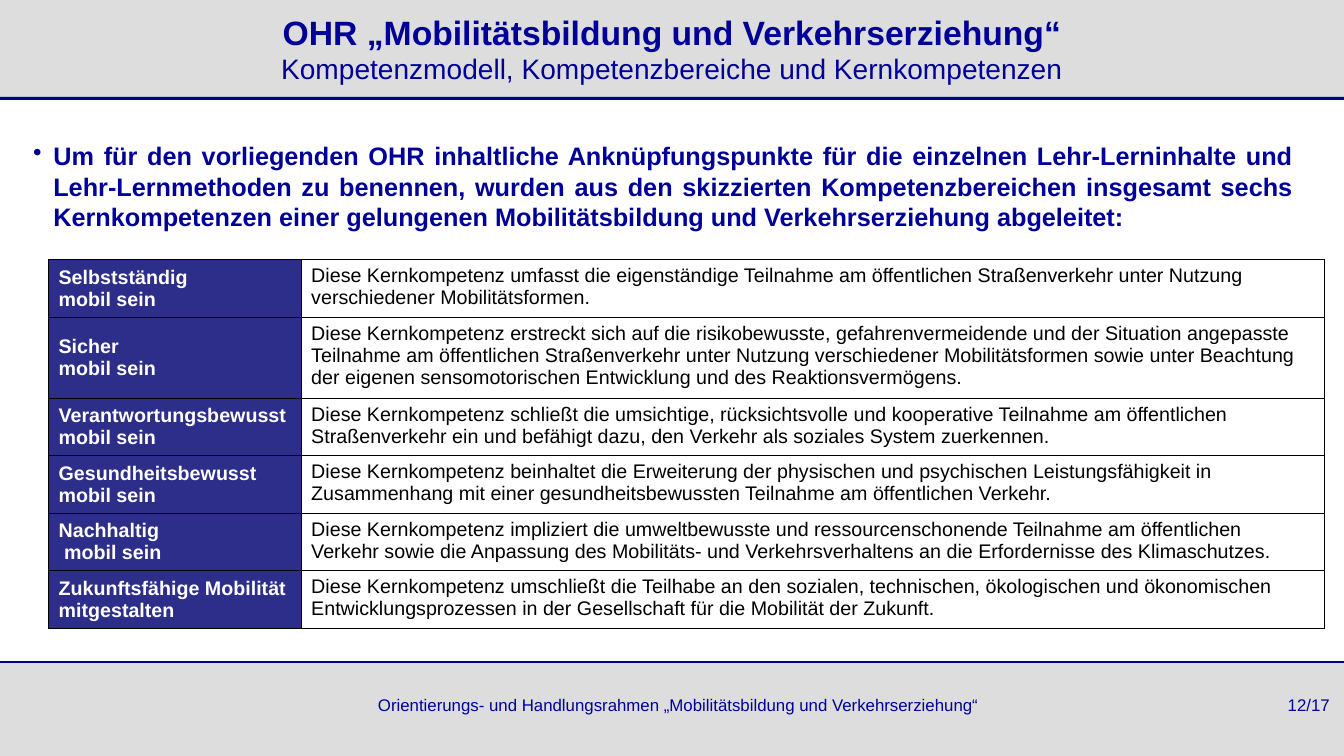
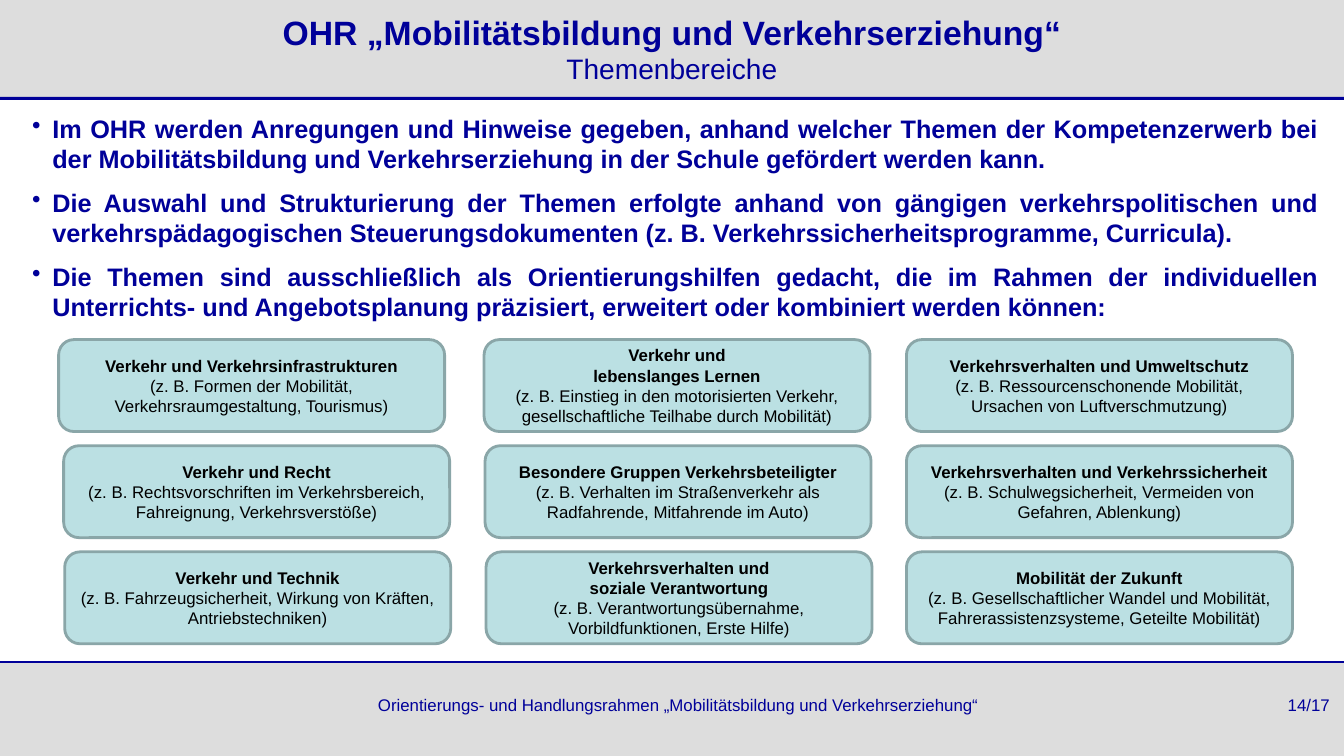
from lxml import etree
from pptx import Presentation
from pptx import util as u
from pptx.dml.color import RGBColor
from pptx.enum import shapes, text
from pptx.oxml.ns import qn

PX = 9144
WIDTH, HEIGHT = 1330, 748
FONT = "Arial"
BLUE = RGBColor(0x00, 0x00, 0x99)
GREY = RGBColor(0xDD, 0xDD, 0xDD)
WHITE = RGBColor(0xFF, 0xFF, 0xFF)
BLACK = RGBColor(0x00, 0x00, 0x00)
INDIGO = RGBColor(0x2D, 0x2D, 0x8A)
AQUA = RGBColor(0xBB, 0xE0, 0xE3)
TEAL = RGBColor(0x8A, 0xA6, 0xA8)
LEFT, CENTER, JUSTIFY = text.PP_ALIGN.LEFT, text.PP_ALIGN.CENTER, text.PP_ALIGN.JUSTIFY

HEADING = "OHR „Mobilitätsbildung und Verkehrserziehung“"
FOOTER = "Orientierungs- und Handlungsrahmen „Mobilitätsbildung und Verkehrserziehung“"
PAGE_COUNT = 17

COMPETENCE_INTRO = [
    "Um für den vorliegenden OHR inhaltliche Anknüpfungspunkte für die einzelnen Lehr-Lerninhalte "
    "und Lehr-Lernmethoden zu benennen, wurden aus den skizzierten Kompetenzbereichen insgesamt "
    "sechs Kernkompetenzen einer gelungenen Mobilitätsbildung und Verkehrserziehung abgeleitet:",
]
COMPETENCES = [
    (57, "Selbstständig\nmobil sein",
     "Diese Kernkompetenz umfasst die eigenständige Teilnahme am öffentlichen Straßenverkehr unter "
     "Nutzung verschiedener Mobilitätsformen."),
    (80, "Sicher\nmobil sein",
     "Diese Kernkompetenz erstreckt sich auf die risikobewusste, gefahrenvermeidende und der "
     "Situation angepasste Teilnahme am öffentlichen Straßenverkehr unter Nutzung verschiedener "
     "Mobilitätsformen sowie unter Beachtung der eigenen sensomotorischen Entwicklung und des "
     "Reaktionsvermögens."),
    (56, "Verantwortungsbewusst mobil sein",
     "Diese Kernkompetenz schließt die umsichtige, rücksichtsvolle und kooperative Teilnahme am "
     "öffentlichen Straßenverkehr ein und befähigt dazu, den Verkehr als soziales System zuerkennen."),
    (57, "Gesundheitsbewusst mobil sein",
     "Diese Kernkompetenz beinhaltet die Erweiterung der physischen und psychischen "
     "Leistungsfähigkeit in Zusammenhang mit einer gesundheitsbewussten Teilnahme am öffentlichen "
     "Verkehr."),
    (57, "Nachhaltig\n mobil sein",
     "Diese Kernkompetenz impliziert die umweltbewusste und ressourcenschonende Teilnahme am "
     "öffentlichen Verkehr sowie die Anpassung des Mobilitäts- und Verkehrsverhaltens an die "
     "Erfordernisse des Klimaschutzes."),
    (56, "Zukunftsfähige Mobilität mitgestalten",
     "Diese Kernkompetenz umschließt die Teilhabe an den sozialen, technischen, ökologischen und "
     "ökonomischen Entwicklungsprozessen in der Gesellschaft für die Mobilität der Zukunft."),
]
TOPIC_INTRO = [
    "Im OHR werden Anregungen und Hinweise gegeben, anhand welcher Themen der Kompetenzerwerb bei "
    "der Mobilitätsbildung und Verkehrserziehung in der Schule gefördert werden kann.",
    "Die Auswahl und Strukturierung der Themen erfolgte anhand von gängigen verkehrspolitischen und "
    "verkehrspädagogischen Steuerungsdokumenten (z. B. Verkehrssicherheitsprogramme, Curricula).",
    "Die Themen sind ausschließlich als Orientierungshilfen gedacht, die im Rahmen der individuellen "
    "Unterrichts- und Angebotsplanung präzisiert, erweitert oder kombiniert werden können:",
]
TOPIC_LEFTS = [(58, 479, 897), (63, 480, 897), (64, 481, 897)]
TOPICS = [
    [("Verkehr und Verkehrsinfrastrukturen",
      "(z. B. Formen der Mobilität, Verkehrsraumgestaltung, Tourismus)"),
     ("Verkehr und\nlebenslanges Lernen",
      "(z. B. Einstieg in den motorisierten Verkehr, gesellschaftliche Teilhabe durch Mobilität)"),
     ("Verkehrsverhalten und Umweltschutz",
      "(z. B. Ressourcenschonende Mobilität, Ursachen von Luftverschmutzung)")],
    [("Verkehr und Recht",
      "(z. B. Rechtsvorschriften im Verkehrsbereich, Fahreignung, Verkehrsverstöße)"),
     ("Besondere Gruppen Verkehrsbeteiligter",
      "(z. B. Verhalten im Straßenverkehr als Radfahrende, Mitfahrende im Auto)"),
     ("Verkehrsverhalten und Verkehrssicherheit",
      "(z. B. Schulwegsicherheit, Vermeiden von Gefahren, Ablenkung)")],
    [("Verkehr und Technik",
      "(z. B. Fahrzeugsicherheit, Wirkung von Kräften, Antriebstechniken)"),
     ("Verkehrsverhalten und\nsoziale Verantwortung",
      "(z. B. Verantwortungsübernahme, Vorbildfunktionen, Erste Hilfe)"),
     ("Mobilität der Zukunft",
      "(z. B. Gesellschaftlicher Wandel und Mobilität, Fahrerassistenzsysteme, Geteilte Mobilität)")],
]


def px(*lengths):
    """Turn pixel lengths into EMU."""
    return [u.Emu(length * PX) for length in lengths]


def style(para, size, color, bold=False, align=LEFT):
    """Set the alignment and font of a paragraph."""
    para.alignment = align
    font = para.font
    font.name, font.size, font.bold = FONT, u.Pt(size), bold
    font.color.rgb = color


def add_block(page, area, fill, kind=shapes.MSO_SHAPE.RECTANGLE):
    """Add a filled shape without line or shadow."""
    block = page.shapes.add_shape(kind, *px(*area))
    block.shadow.inherit = False
    block.fill.solid()
    block.fill.fore_color.rgb = fill
    block.line.fill.background()
    return block


def add_footer(page, area, inset, number_stop, number):
    """Add the footer line with the page number at a right tab stop."""
    box = page.shapes.add_textbox(*px(*area))
    frame = box.text_frame
    frame.word_wrap = True
    frame.margin_left = u.Emu(inset * PX)
    frame.text = f"{FOOTER}\t{number}/{PAGE_COUNT}"
    para = frame.paragraphs[0]
    stops = etree.SubElement(para._p.get_or_add_pPr(), qn("a:tabLst"))
    etree.SubElement(stops, qn("a:tab"), pos=str(number_stop * PX), algn="r")
    style(para, 12, BLUE)


def add_page(deck, subtitle, number):
    """Add a slide with the shared bands, title and footer."""
    page = deck.slides.add_slide(deck.slide_layouts[5])
    for top, height, fill in ((96, 4, BLUE), (653, 3, BLUE)):
        add_block(page, (0, top, WIDTH, height), fill)
    add_footer(page, (182, 682, 1145, 39), 192, 942, number)
    add_block(page, (0, 99, WIDTH, 555), WHITE)
    title = page.shapes.title
    title.left, title.top, title.width, title.height = px(0, 5, WIDTH, 86)
    frame = title.text_frame
    frame.auto_size = text.MSO_AUTO_SIZE.NONE
    frame.vertical_anchor = text.MSO_ANCHOR.MIDDLE
    para = frame.paragraphs[0]
    style(para, 24, BLUE, True, CENTER)
    para.add_run().text = HEADING
    para.add_line_break()
    span = para.add_run()
    span.text = subtitle
    span.font.size, span.font.bold = u.Pt(20), False
    return page


def add_bullets(page, area, items):
    """Add justified bold bullet paragraphs."""
    box = page.shapes.add_textbox(*px(*area))
    frame = box.text_frame
    frame.word_wrap = True
    frame.text = "\n".join(items)
    indent = 20 * PX
    for index, para in enumerate(frame.paragraphs):
        properties = para._p.get_or_add_pPr()
        properties.set("marL", str(indent))
        properties.set("indent", str(-indent))
        etree.SubElement(properties, qn("a:buChar")).set("char", "•")
        style(para, 18, BLUE, True, JUSTIFY)
        para.space_after = u.Pt(6)
        if index:
            para.space_before = u.Pt(3.6)


def add_borders(cell):
    """Draw a thin black line on each side of a cell."""
    properties = cell._tc.get_or_add_tcPr()
    for index, side in enumerate(("lnL", "lnR", "lnT", "lnB")):
        line = etree.Element(qn(f"a:{side}"), w=str(u.Pt(1)))
        fill = etree.SubElement(line, qn("a:solidFill"))
        etree.SubElement(fill, qn("a:srgbClr"), val=str(BLACK))
        properties.insert(index, line)


def add_competence_table(page, left, top, widths):
    """Add the table of core competences."""
    heights = [row[0] for row in COMPETENCES]
    area = px(left, top, sum(widths), sum(heights))
    table = page.shapes.add_table(len(heights), len(widths), *area).table
    table.first_row = table.horz_banding = False
    for column, width in zip(table.columns, px(*widths)):
        column.width = width
    looks = ((INDIGO, WHITE, True, text.MSO_ANCHOR.MIDDLE), (WHITE, BLACK, False, text.MSO_ANCHOR.TOP))
    for row, (height, *entries) in zip(table.rows, COMPETENCES):
        row.height = u.Emu(height * PX)
        for cell, words, (fill, color, bold, anchor) in zip(row.cells, entries, looks):
            cell.text_frame.text = words
            cell.vertical_anchor = anchor
            cell.fill.solid()
            cell.fill.fore_color.rgb = fill
            add_borders(cell)
            for para in cell.text_frame.paragraphs:
                style(para, 14, color, bold)


def add_topic_card(page, area, heading, examples):
    """Add a rounded card with a bold heading and examples."""
    card = add_block(page, area, AQUA, shapes.MSO_SHAPE.ROUNDED_RECTANGLE)
    card.line.color.rgb = TEAL
    card.line.width = u.Pt(2)
    frame = card.text_frame
    frame.word_wrap = True
    frame.vertical_anchor = text.MSO_ANCHOR.MIDDLE
    frame.text = f"{heading}\n{examples}"
    last = len(frame.paragraphs) - 1
    for index, para in enumerate(frame.paragraphs):
        style(para, 12, BLACK, index < last, CENTER)


def add_topic_grid(page, top, width, height, gap):
    """Add the rows of topic cards."""
    for index, (lefts, topics) in enumerate(zip(TOPIC_LEFTS, TOPICS)):
        for left, topic in zip(lefts, topics):
            add_topic_card(page, (left, top + index * (height + gap), width, height), *topic)


def main():
    """Build and save the deck."""
    deck = Presentation()
    deck.slide_width, deck.slide_height = px(WIDTH, HEIGHT)
    background = deck.slide_master.background.fill
    background.solid()
    background.fore_color.rgb = GREY

    page = add_page(deck, "Kompetenzmodell, Kompetenzbereiche und Kernkompetenzen", 12)
    add_bullets(page, (23, 134, 1267, 101), COMPETENCE_INTRO)
    add_competence_table(page, 48, 257, (250, 1013))

    page = add_page(deck, "Themenbereiche", 14)
    add_bullets(page, (22, 107, 1293, 228), TOPIC_INTRO)
    add_topic_grid(page, 336, 382, 91, 14)
    deck.save("out.pptx")


if __name__ == "__main__":
    main()
